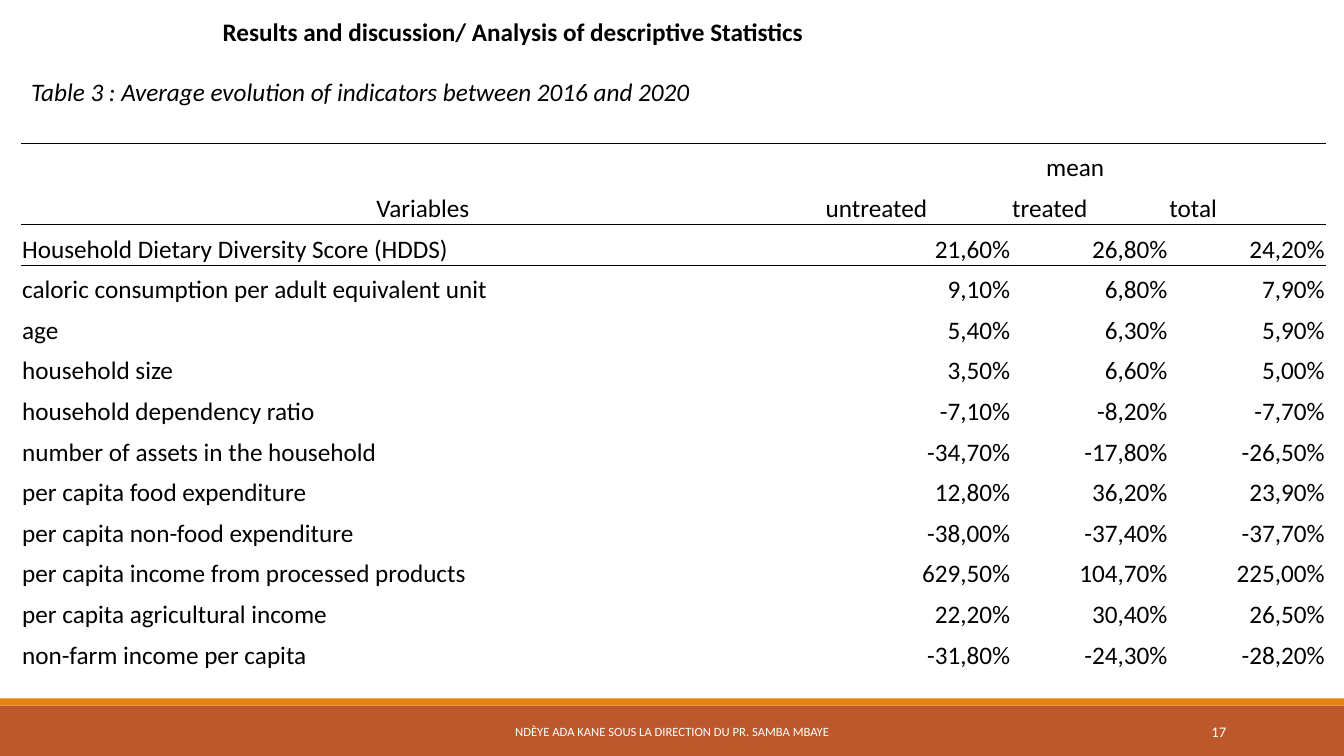
from lxml import etree
from pptx import Presentation
from pptx.dml.color import RGBColor
from pptx.enum.shapes import MSO_SHAPE as Shape
from pptx.enum.text import MSO_ANCHOR as Anchor, PP_ALIGN as Align
from pptx.oxml.ns import qn
from pptx.util import Inches, Pt

BLACK = RGBColor(0x00, 0x00, 0x00)
WHITE = RGBColor(0xFF, 0xFF, 0xFF)
RUST = RGBColor(0xBD, 0x58, 0x2C)
ORANGE = RGBColor(0xE4, 0x83, 0x12)
FONT = "Calibri"
PLAIN_STYLE = "{2D5ABB26-0587-4C30-8999-92F81FD0307C}"
SLIDE_WIDTH, SLIDE_HEIGHT = 13.33, 7.5

COLUMN_WIDTHS = (7.97, 1.85, 1.56, 1.56)
GROUPS = ("untreated", "treated", "total")
INDICATORS = (
    ("Household Dietary Diversity Score (HDDS)", "21,60%", "26,80%", "24,20%"),
    ("caloric consumption per adult equivalent unit", "9,10%", "6,80%", "7,90%"),
    ("age", "5,40%", "6,30%", "5,90%"),
    ("household size", "3,50%", "6,60%", "5,00%"),
    ("household dependency ratio", "-7,10%", "-8,20%", "-7,70%"),
    ("number of assets in the household", "-34,70%", "-17,80%", "-26,50%"),
    ("per capita food expenditure", "12,80%", "36,20%", "23,90%"),
    ("per capita non-food expenditure", "-38,00%", "-37,40%", "-37,70%"),
    ("per capita income from processed products", "629,50%", "104,70%", "225,00%"),
    ("per capita agricultural income", "22,20%", "30,40%", "26,50%"),
    ("non-farm income per capita", "-31,80%", "-24,30%", "-28,20%"),
)


def write(frame, wording, size=18, color=BLACK, align=Align.LEFT, bold=False, italic=False):
    paragraph = frame.paragraphs[0]
    paragraph.alignment = align
    run = paragraph.add_run()
    run.text = wording
    font = run.font
    font.name, font.size = FONT, Pt(size)
    font.bold, font.italic = bold, italic
    font.color.rgb = color


def add_label(slide, box, wording, anchor=Anchor.TOP, **style):
    frame = slide.shapes.add_textbox(*map(Inches, box)).text_frame
    frame.word_wrap = True
    frame.vertical_anchor = anchor
    write(frame, wording, **style)


def add_band(slide, box, color):
    band = slide.shapes.add_shape(Shape.RECTANGLE, *map(Inches, box))
    band.shadow.inherit = False
    band.fill.solid()
    band.fill.fore_color.rgb = color
    band.line.fill.background()


def add_footer(slide, left, top, width, height):
    stripe = 0.07
    add_band(slide, (left, top + stripe, width, height - stripe), RUST)
    add_band(slide, (left, top, width, stripe), ORANGE)
    label_top = top + 0.13
    add_label(slide, (left + 4.03, label_top, 5.27, 0.4),
              "NDÈYE ADA KANE SOUS LA DIRECTION DU PR. SAMBA MBAYE",
              Anchor.MIDDLE, size=9, color=WHITE, align=Align.CENTER)
    add_label(slide, (left + 10.83, label_top, 1.43, 0.4), "17",
              Anchor.MIDDLE, size=10.5, color=WHITE, align=Align.RIGHT)


def add_heading(slide, left, top, width, height):
    add_label(slide, (left + 1.9, top, 7.05, 0.4),
              "Results and discussion/ Analysis of descriptive Statistics", bold=True)
    add_label(slide, (left, top + 0.6, width, height - 0.6),
              "Table 3 : Average evolution of indicators between 2016 and 2020", italic=True)


def rule(cell, side):
    line = etree.SubElement(cell._tc.get_or_add_tcPr(), qn(f"a:ln{side}"), w=str(Pt(0.5)))
    fill = etree.SubElement(line, qn("a:solidFill"))
    etree.SubElement(fill, qn("a:srgbClr"), val=str(BLACK))


def add_indicator_table(slide, left, top, width, height):
    row_count = len(INDICATORS) + 2
    table = slide.shapes.add_table(row_count, len(COLUMN_WIDTHS),
                                   *map(Inches, (left, top, width, height))).table
    table.first_row = table.horz_banding = False
    table._tbl.tblPr.find(qn("a:tableStyleId")).text = PLAIN_STYLE
    for column, column_width in zip(table.columns, COLUMN_WIDTHS):
        column.width = Inches(column_width)
    table.cell(0, 0).merge(table.cell(1, 0))
    table.cell(0, 1).merge(table.cell(0, 3))

    rows = (("Variables", "mean", "", ""), ("", *GROUPS), *INDICATORS)
    for r, row in enumerate(rows):
        for c, wording in enumerate(row):
            cell = table.cell(r, c)
            cell.margin_left = cell.margin_right = cell.margin_top = Inches(0.01)
            cell.margin_bottom = 0
            cell.vertical_anchor = Anchor.BOTTOM
            if r in (0, 2):
                rule(cell, "T")
            if r == 1 or (r, c) == (0, 0):
                rule(cell, "B")
            cell.fill.background()
            if r == 0:
                align = Align.CENTER
            elif r == 1 or c == 0:
                align = Align.LEFT
            else:
                align = Align.RIGHT
            if wording:
                write(cell.text_frame, wording, align=align)


def main():
    deck = Presentation()
    deck.slide_width, deck.slide_height = Inches(SLIDE_WIDTH), Inches(SLIDE_HEIGHT)
    slide = deck.slides.add_slide(deck.slide_layouts[6])
    add_footer(slide, 0, 6.93, SLIDE_WIDTH, 0.57)
    add_heading(slide, 0.21, 0.11, 12.17, 1.31)
    add_indicator_table(slide, 0.21, 1.42, sum(COLUMN_WIDTHS), 5.24)
    deck.save("out.pptx")


if __name__ == "__main__":
    main()
